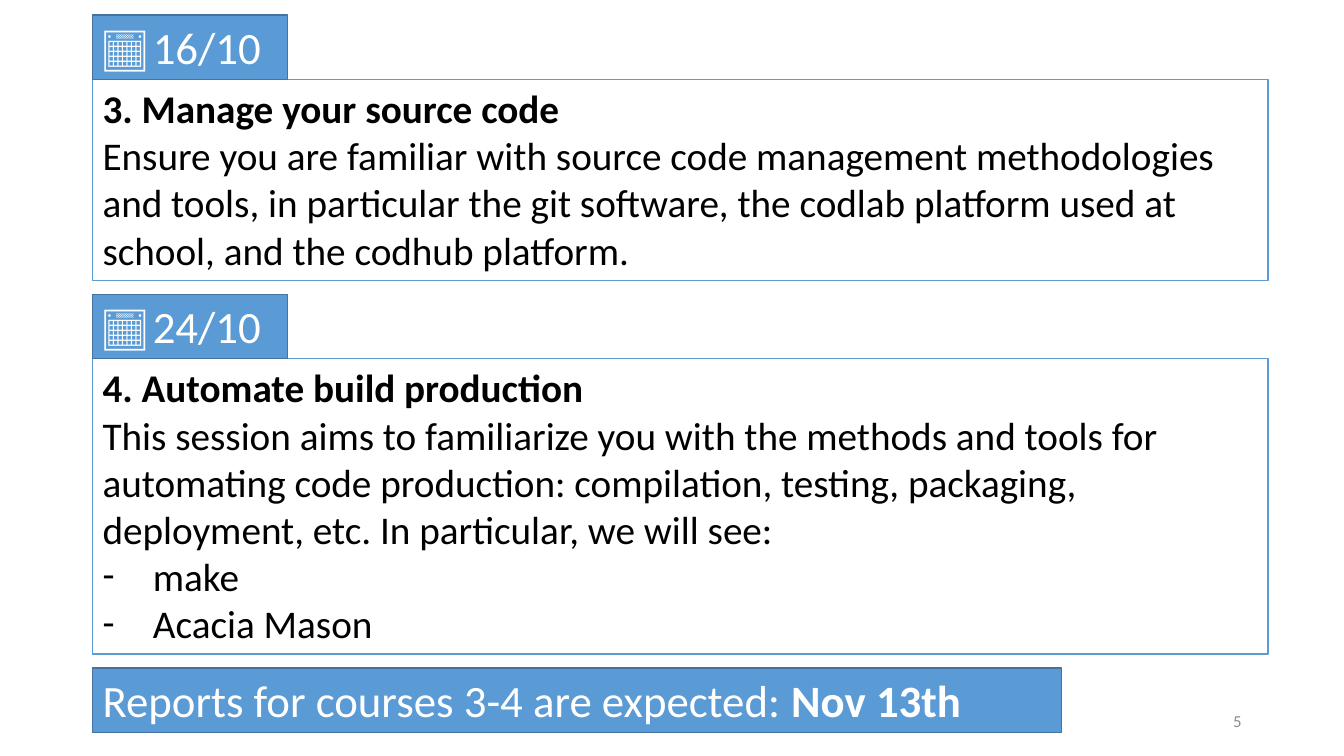
from dataclasses import dataclass

from lxml import etree
from pptx import Presentation
from pptx.dml.color import RGBColor
from pptx.enum.shapes import MSO_SHAPE
from pptx.enum.text import MSO_ANCHOR, MSO_AUTO_SIZE, PP_ALIGN
from pptx.oxml.ns import qn
from pptx.util import Pt

RECT = MSO_SHAPE.RECTANGLE
TOP, MIDDLE = MSO_ANCHOR.TOP, MSO_ANCHOR.MIDDLE
GROW = MSO_AUTO_SIZE.SHAPE_TO_FIT_TEXT
LEFT, RIGHT = PP_ALIGN.LEFT, PP_ALIGN.RIGHT


@dataclass(frozen=True)
class Theme:
    font: str = "Calibri"
    blue: str = "5B9BD5"
    edge: str = "43739E"
    white: str = "FFFFFF"
    black: str = "000000"
    grey: str = "8C8C8C"
    body: int = 28
    label: int = 32
    space: int = 18
    small: int = 12


THEME = Theme()
MARGIN, START, GAP = 66.2, 10.8, 10
BAR, TAG, WIDE, NOTE = 46.1, 139, 839.5, 692

COURSES = [
    ("16/10", "3. Manage your source code",
     "Ensure you are familiar with source code management methodologies "
     "and tools, in particular the git software, the codlab platform used "
     "at school, and the codhub platform.", [], 143.3),
    ("24/10", "4. Automate build production",
     "This session aims to familiarize you with the methods and tools for "
     "automating code production: compilation, testing, packaging, "
     "deployment, etc. In particular, we will see:",
     ["make", "Acacia Mason"], 211),
]


def add_run(para, text, size, color, bold=False):
    run = para.add_run()
    run.text = text
    font = run.font
    font.name, font.size, font.bold = THEME.font, Pt(size), bold
    font.color.rgb = RGBColor.from_string(color)


def add_box(slide, top, width, height, fill, line, wrap=True):
    """Add a bordered rectangle at the left margin and return its text frame."""
    box = slide.shapes.add_shape(RECT, Pt(MARGIN), Pt(top), Pt(width), Pt(height))
    box.shadow.inherit = False
    box.fill.solid()
    box.fill.fore_color.rgb = RGBColor.from_string(fill)
    box.line.color.rgb = RGBColor.from_string(line)
    box.line.width = Pt(1)
    frame = box.text_frame
    frame.word_wrap = wrap
    frame.auto_size = GROW
    frame.vertical_anchor = TOP
    frame.paragraphs[0].alignment = LEFT
    return frame


def add_bar(slide, top, width, runs, wrap=True):
    """Add a blue bar; runs are (text, size, bold)."""
    frame = add_box(slide, top, width, BAR, THEME.blue, THEME.edge, wrap)
    for text, size, bold in runs:
        add_run(frame.paragraphs[0], text, size, THEME.white, bold)


def add_dash(para):
    props = para._p.get_or_add_pPr()
    props.set("marL", str(Pt(36)))
    props.set("indent", str(Pt(-36)))
    etree.SubElement(props, qn("a:buFont")).set("typeface", THEME.font)
    etree.SubElement(props, qn("a:buChar")).set("char", "-")


def add_card(slide, top, height, title, text, items):
    frame = add_box(slide, top, WIDE, height, THEME.white, THEME.blue)
    add_run(frame.paragraphs[0], title, THEME.body, THEME.black, True)
    for line in [text, *items]:
        para = frame.add_paragraph()
        para.alignment = LEFT
        if line in items:
            add_dash(para)
        add_run(para, line, THEME.body, THEME.black)


def add_number(slide, text):
    box = slide.shapes.add_textbox(Pt(678), Pt(500.5), Pt(216), Pt(28.8))
    frame = box.text_frame
    frame.word_wrap = True
    frame.vertical_anchor = MIDDLE
    frame.paragraphs[0].alignment = RIGHT
    add_run(frame.paragraphs[0], text, THEME.small, THEME.grey)


def main():
    deck = Presentation()
    deck.slide_width, deck.slide_height = Pt(960), Pt(540)
    slide = deck.slides.add_slide(deck.slide_layouts[6])
    add_number(slide, "5")
    top = START
    for date, title, text, items, height in COURSES:
        add_card(slide, top + BAR, height, title, text, items)
        add_bar(slide, top, TAG, [("📅", THEME.label, False),
                                  (" ", THEME.space, False),
                                  (date, THEME.label, False)], wrap=False)
        top += BAR + height + GAP
    add_bar(slide, top, NOTE, [
        ("Reports for courses 3-4 are expected: ", THEME.label, False),
        ("Nov 13th", THEME.label, True)])
    deck.save("out.pptx")


if __name__ == "__main__":
    main()
